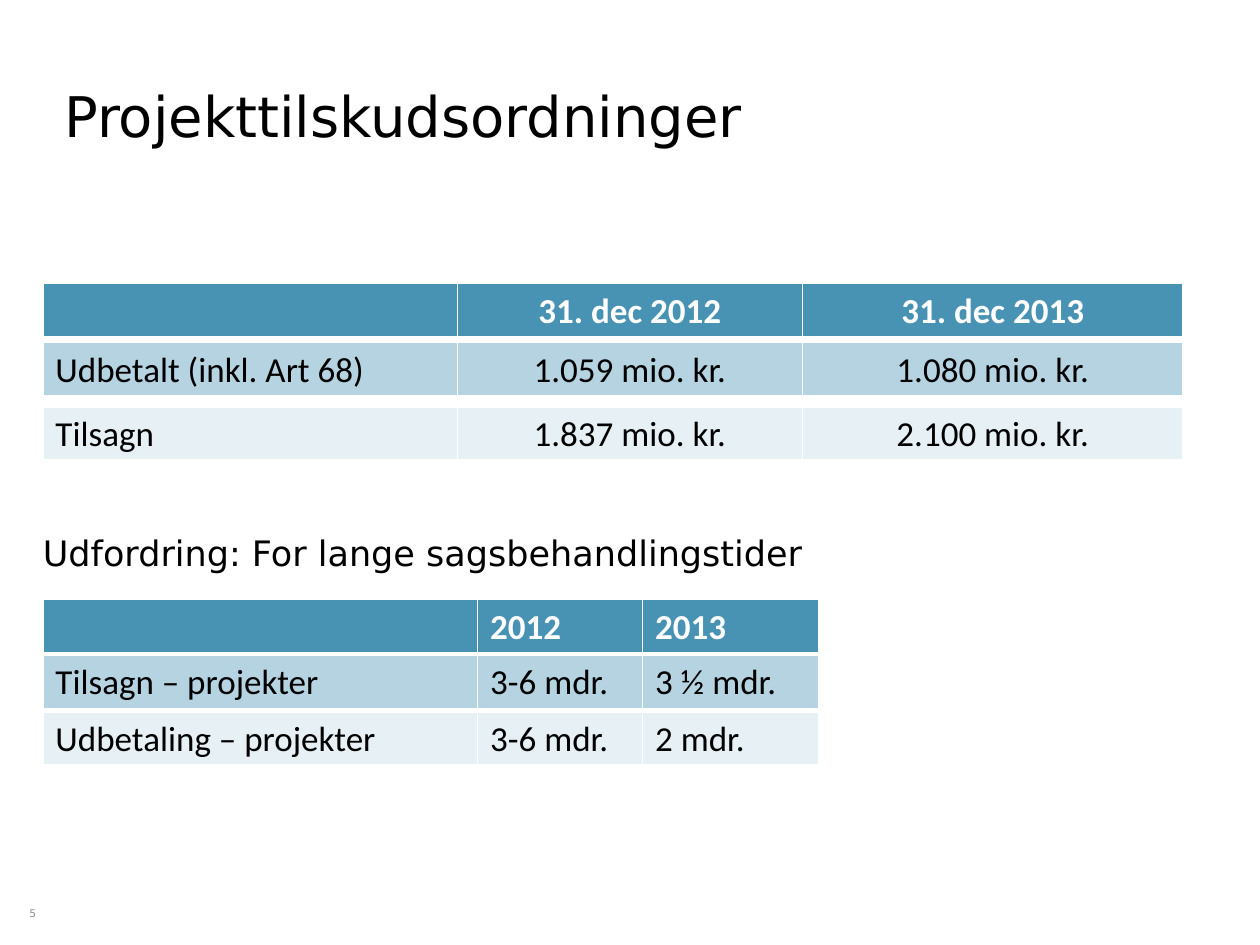
from dataclasses import dataclass

import pptx
import pptx.dml.color
import pptx.enum.text
import pptx.oxml
import pptx.oxml.ns
import pptx.util
from pptx.slide import Slide

Inches = pptx.util.Inches
Pt = pptx.util.Pt
RGBColor = pptx.dml.color.RGBColor
Align = pptx.enum.text.PP_ALIGN
Anchor = pptx.enum.text.MSO_ANCHOR

BLACK = RGBColor(0x00, 0x00, 0x00)
WHITE = RGBColor(0xFF, 0xFF, 0xFF)
GRAY = RGBColor(0x8C, 0x8C, 0x8C)
HEADER_BLUE = RGBColor(0x48, 0x92, 0xB4)
MID_BLUE = RGBColor(0xB5, 0xD3, 0xE1)
PALE_BLUE = RGBColor(0xE6, 0xF0, 0xF5)
BAND_FILLS = (HEADER_BLUE, MID_BLUE, PALE_BLUE)
BORDER_WIDTHS = {"L": 1, "R": 1, "T": 1, "B": 3}

LEFT = 0.34
BAND_HEIGHT = 0.43


@dataclass
class Label:
    text: str
    left: float
    top: float
    width: float
    height: float
    size: float
    color: RGBColor = BLACK
    align: Align = Align.LEFT
    anchor: Anchor = Anchor.TOP
    line_spacing: float = 1.0


@dataclass
class Overview:
    tops: tuple[float, ...]
    widths: tuple[float, ...]
    value_align: Align
    bands: tuple[tuple[str, ...], ...]


LABELS = (
    Label("Projekttilskudsordninger", 0.51, 0, 8.97, 1.19, 32,
          anchor=Anchor.BOTTOM, line_spacing=0.9),
    Label("Udfordring: For lange sagsbehandlingstider", LEFT, 4.28, 9.52, 0.26, 20,
          line_spacing=0.8),
    Label("5", 0, 6.99, 0.52, 0.51, 6, GRAY, Align.CENTER, Anchor.MIDDLE),
)

OVERVIEWS = (
    Overview((2.25, 2.72, 3.23), (3.29, 2.74, 3.02), Align.CENTER, (
        ("", "31. dec 2012", "31. dec 2013"),
        ("Udbetalt (inkl. Art 68)", "1.059 mio. kr.", "1.080 mio. kr."),
        ("Tilsagn", "1.837 mio. kr.", "2.100 mio. kr."),
    )),
    Overview((4.76, 5.2, 5.65), (3.45, 1.31, 1.4), Align.LEFT, (
        ("", "2012", "2013"),
        ("Tilsagn – projekter", "3-6 mdr.", "3 ½ mdr."),
        ("Udbetaling – projekter", "3-6 mdr.", "2 mdr."),
    )),
)


def add_run(paragraph, text: str, font: str, size: float, color: RGBColor,
            bold: bool = False) -> None:
    run = paragraph.add_run()
    run.text = text
    run.font.name = font
    run.font.size = Pt(size)
    run.font.color.rgb = color
    run.font.bold = bold


def add_label(slide: Slide, label: Label) -> None:
    frame = slide.shapes.add_textbox(
        Inches(label.left), Inches(label.top),
        Inches(label.width), Inches(label.height)).text_frame
    frame.word_wrap = True
    frame.vertical_anchor = label.anchor
    frame.margin_left = frame.margin_right = 0
    frame.margin_top = frame.margin_bottom = 0
    paragraph = frame.paragraphs[0]
    paragraph.alignment = label.align
    paragraph.line_spacing = label.line_spacing
    add_run(paragraph, label.text, "DejaVu Sans", label.size, label.color)


def add_borders(cell) -> None:
    properties = cell._tc.get_or_add_tcPr()
    for side, width in BORDER_WIDTHS.items():
        properties.append(pptx.oxml.parse_xml(
            f'<a:ln{side} {pptx.oxml.ns.nsdecls("a")} w="{Pt(width)}">'
            f'<a:solidFill><a:srgbClr val="{WHITE}"/></a:solidFill></a:ln{side}>'))


def add_band(slide: Slide, overview: Overview, index: int) -> None:
    texts = overview.bands[index]
    is_header = index == 0
    table = slide.shapes.add_table(
        1, len(texts), Inches(LEFT), Inches(overview.tops[index]),
        Inches(sum(overview.widths)), Inches(BAND_HEIGHT)).table
    table.first_row = is_header
    table.horz_banding = False
    for column, (text, width) in enumerate(zip(texts, overview.widths)):
        table.columns[column].width = Inches(width)
        cell = table.cell(0, column)
        add_borders(cell)
        cell.fill.solid()
        cell.fill.fore_color.rgb = BAND_FILLS[index]
        if text:
            paragraph = cell.text_frame.paragraphs[0]
            paragraph.alignment = overview.value_align if column else Align.LEFT
            add_run(paragraph, text, "Calibri", 20,
                    WHITE if is_header else BLACK, is_header)


def main() -> None:
    presentation = pptx.Presentation()
    presentation.slide_width = Inches(10)
    presentation.slide_height = Inches(7.5)
    slide = presentation.slides.add_slide(presentation.slide_layouts[6])
    for label in LABELS:
        add_label(slide, label)
    for overview in OVERVIEWS:
        for index in range(len(overview.bands)):
            add_band(slide, overview, index)
    presentation.save("out.pptx")


if __name__ == "__main__":
    main()
